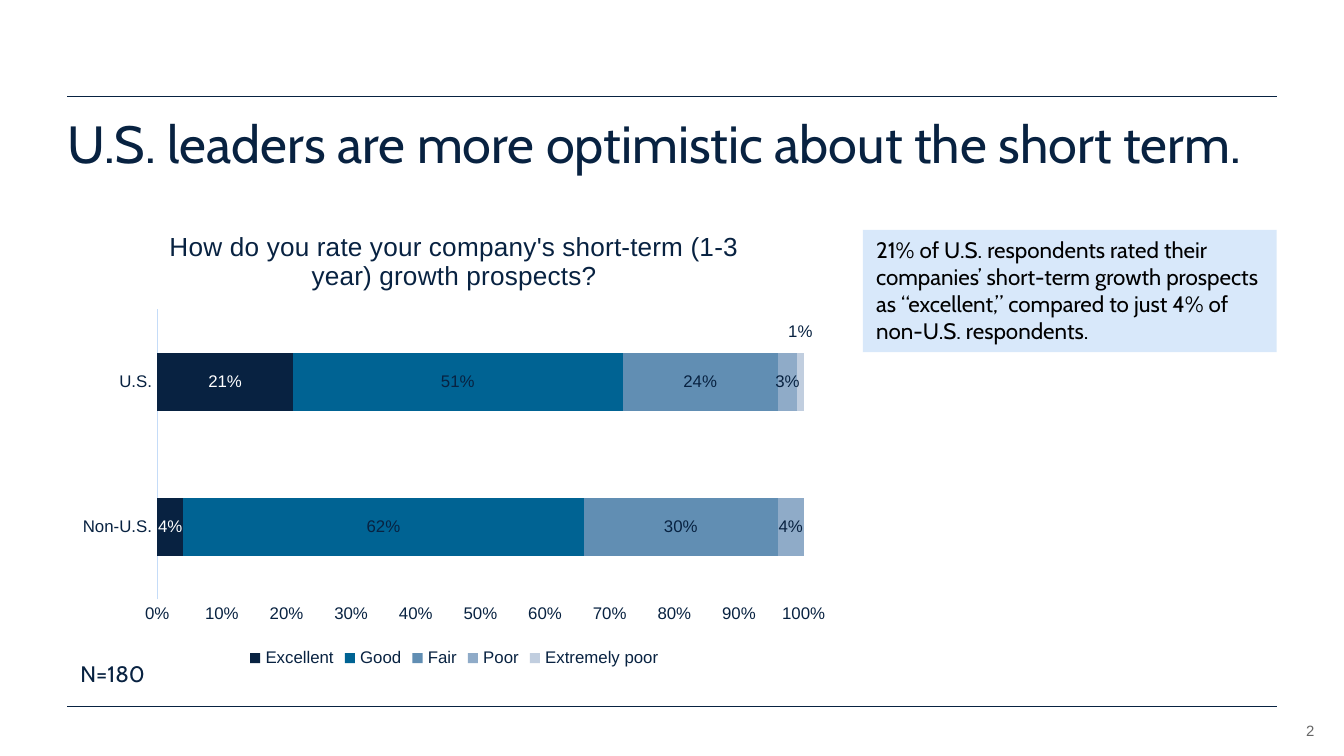
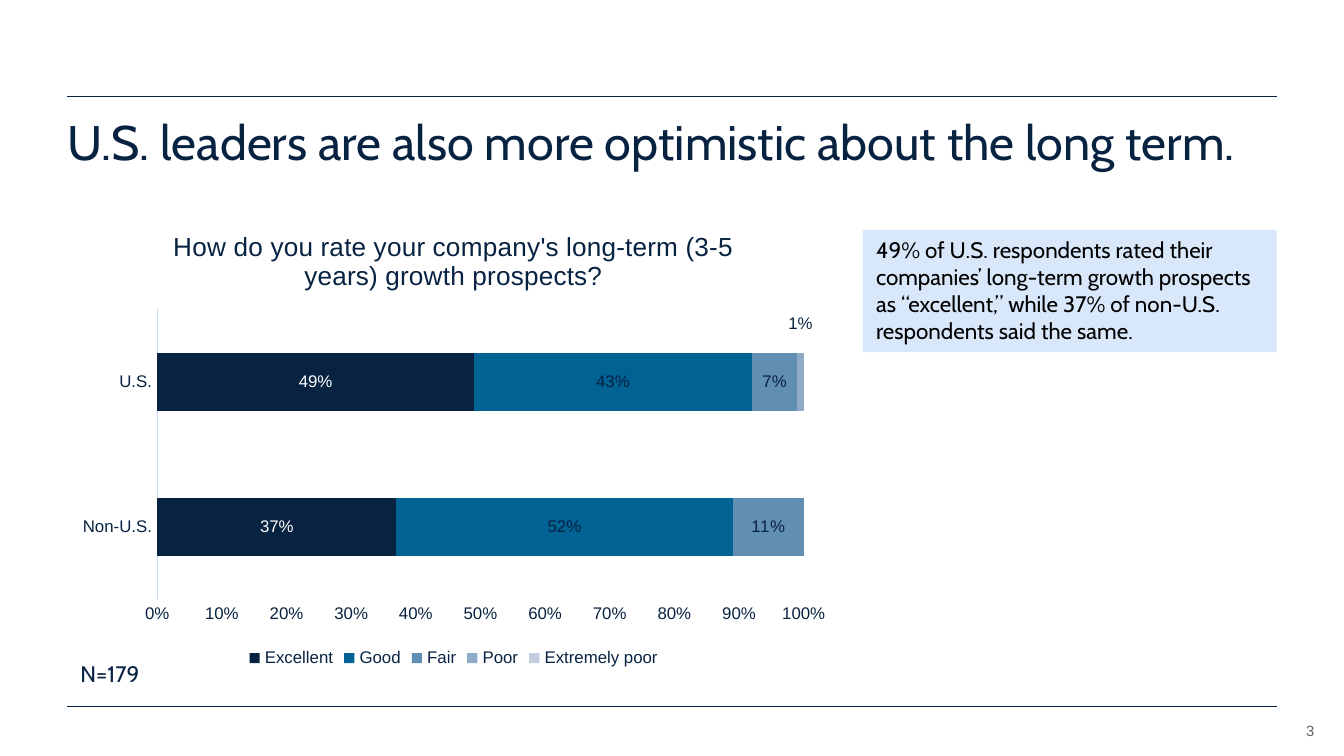
from dataclasses import dataclass
from typing import Optional

from lxml import etree
from pptx import Presentation
from pptx.chart.data import CategoryChartData
from pptx.dml.color import RGBColor
from pptx.enum import chart as ch
from pptx.enum import shapes, text
from pptx.oxml import ns
from pptx.util import Inches, Pt

NAVY, WHITE, BLACK = "082241", "FFFFFF", "000000"
CALLOUT_BLUE, AXIS_BLUE, NUMBER_GREY = "D8E8FA", "C5DCF8", "666666"
HEAD_FONT, CHART_FONT = "Cabin", "Arial"
LEFT, RIGHT = 0.5, 9.5
RULES_Y = (0.72, 5.26)
GROUPS = ("Non-U.S.", "U.S.")
US = GROUPS.index("U.S.")
RATINGS = {
    "Excellent": NAVY,
    "Good": "006393",
    "Fair": "618EB3",
    "Poor": "8FABC8",
    "Extremely poor": "C1CEDF",
}
C15 = "http://schemas.microsoft.com/office/drawing/2012/chart"
LABEL_EXTENSION = "{CE6537A1-D6FC-4f65-9D91-7224C49458BB}"


@dataclass(frozen=True)
class Box:
    left: float
    top: float
    width: float
    height: float

    def lengths(self) -> tuple:
        return tuple(Inches(v) for v in (self.left, self.top, self.width, self.height))


@dataclass(frozen=True)
class Style:
    size: float
    color: str
    font: str = HEAD_FONT


@dataclass(frozen=True)
class Survey:
    number: int
    headline: str
    headline_size: float
    finding: str
    sample: str
    question: str
    chart_box: Box
    shares: tuple[tuple[Optional[float], Optional[float]], ...]
    raised_rating: str
    raise_by: float


BARS = Box(1.17, 2.3, 4.81, 2.16)
SURVEYS = (
    Survey(
        2, "U.S. leaders are more optimistic about the short term.", 28,
        "21% of U.S. respondents rated their companies’ short-term growth prospects "
        "as “excellent,” compared to just 4% of non-U.S. respondents.",
        "N=180",
        "How do you rate your company's short-term (1-3 year) growth prospects?",
        Box(0.5, 1.55, 5.76, 3.46),
        ((0.04, 0.21), (0.62, 0.51), (0.3, 0.24), (0.04, 0.03), (None, 0.01)),
        "Extremely poor", 0.37,
    ),
    Survey(
        3, "U.S. leaders are also more optimistic about the long term.", 26,
        "49% of U.S. respondents rated their companies’ long-term growth prospects "
        "as “excellent,” while 37% of non-U.S. respondents said the same.",
        "N=179",
        "How do you rate your company's long-term (3-5 years) growth prospects?",
        Box(0.49, 1.55, 5.77, 3.46),
        ((0.37, 0.49), (0.52, 0.43), (0.11, 0.07), (None, 0.01), (None, None)),
        "Poor", 0.43,
    ),
)


def rgb(color: str) -> RGBColor:
    return RGBColor.from_string(color)


def apply_font(font, style: Style) -> None:
    font.size = Pt(style.size)
    font.name = style.font
    font.bold = False
    font.color.rgb = rgb(style.color)


def fill_solid(fill, color: str) -> None:
    fill.solid()
    fill.fore_color.rgb = rgb(color)


def write(shape, words: str, style: Style, align=text.PP_ALIGN.LEFT,
          anchor=text.MSO_ANCHOR.TOP, inset: bool = True):
    frame = shape.text_frame
    frame.word_wrap = True
    frame.vertical_anchor = anchor
    if not inset:
        frame.margin_left = frame.margin_right = 0
        frame.margin_top = frame.margin_bottom = 0
    paragraph = frame.paragraphs[0]
    paragraph.text = words
    paragraph.alignment = align
    apply_font(paragraph.font, style)
    return paragraph


def add_text(slide, box: Box, words: str, style: Style, **options):
    return write(slide.shapes.add_textbox(*box.lengths()), words, style, **options)


def add_rule(slide, y: float) -> None:
    rule = slide.shapes.add_connector(
        shapes.MSO_CONNECTOR.STRAIGHT, Inches(LEFT), Inches(y), Inches(RIGHT), Inches(y))
    rule.line.color.rgb = rgb(NAVY)
    rule.line.width = Pt(0.5)
    etree.SubElement(rule._element.spPr, ns.qn("a:effectLst"))


def add_callout(slide, box: Box, words: str) -> None:
    callout = slide.shapes.add_shape(shapes.MSO_SHAPE.RECTANGLE, *box.lengths())
    callout.shadow.inherit = False
    fill_solid(callout.fill, CALLOUT_BLUE)
    callout.line.fill.background()
    write(callout, words, Style(12, BLACK))


def manual_layout(**settings) -> etree._Element:
    layout = etree.Element(ns.qn("c:layout"))
    manual = etree.SubElement(layout, ns.qn("c:manualLayout"))
    for tag, value in settings.items():
        etree.SubElement(manual, ns.qn(f"c:{tag}")).set("val", str(value))
    return layout


def place_bars(chart, frame: Box) -> None:
    area = chart._chartSpace.chart.plotArea
    for old in area.findall(ns.qn("c:layout")):
        area.remove(old)
    area.insert(0, manual_layout(
        layoutTarget="inner", xMode="edge", yMode="edge",
        x=(BARS.left - frame.left) / frame.width,
        y=(BARS.top - frame.top) / frame.height,
        w=BARS.width / frame.width,
        h=BARS.height / frame.height))


def hide_leader_lines(labels: etree._Element) -> None:
    for leader in labels.findall(ns.qn("c:showLeaderLines")):
        leader.set("val", "0")
    extensions = etree.SubElement(labels, ns.qn("c:extLst"))
    extension = etree.SubElement(extensions, ns.qn("c:ext"), nsmap={"c15": C15})
    extension.set("uri", LABEL_EXTENSION)
    etree.SubElement(extension, f"{{{C15}}}showLeaderLines").set("val", "0")


def raise_label(series, share_of_height: float, style: Style) -> None:
    label = series.points[US].data_label
    label.position = ch.XL_LABEL_POSITION.CENTER
    apply_font(label.font, style)
    labels = series._element.find(ns.qn("c:dLbls"))
    index = labels.find(ns.qn("c:dLbl")).find(ns.qn("c:idx"))
    index.addnext(manual_layout(x=0, y=-share_of_height))
    hide_leader_lines(labels)


def style_series(series, color: str) -> Style:
    fill_solid(series.format.fill, color)
    series.invert_if_negative = False
    label_style = Style(9, WHITE if color == NAVY else NAVY, CHART_FONT)
    labels = series.data_labels
    labels.show_value = True
    labels.number_format = "0%"
    labels.number_format_is_linked = False
    labels.position = ch.XL_LABEL_POSITION.CENTER
    apply_font(labels.font, label_style)
    return label_style


def style_axes(chart) -> None:
    for axis in (chart.category_axis, chart.value_axis):
        axis.has_major_gridlines = False
        axis.major_tick_mark = axis.minor_tick_mark = ch.XL_TICK_MARK.NONE
        apply_font(axis.tick_labels.font, Style(9, NAVY, CHART_FONT))
    group_line = chart.category_axis.format.line
    group_line.color.rgb = rgb(AXIS_BLUE)
    group_line.width = Pt(0.75)
    share_axis = chart.value_axis
    share_axis.minimum_scale, share_axis.maximum_scale = 0, 1
    share_axis.major_unit = 0.1
    share_axis.tick_labels.number_format = "0%"
    share_axis.tick_labels.number_format_is_linked = False
    share_axis.format.line.fill.background()


def add_ratings_chart(slide, survey: Survey) -> None:
    data = CategoryChartData(number_format="0%")
    data.categories = GROUPS
    for rating, shares in zip(RATINGS, survey.shares):
        data.add_series(rating, shares)
    frame = survey.chart_box
    chart = slide.shapes.add_chart(
        ch.XL_CHART_TYPE.BAR_STACKED_100, *frame.lengths(), data).chart
    apply_font(chart.font, Style(10, NAVY, CHART_FONT))

    chart.has_title = True
    question = chart.chart_title.text_frame.paragraphs[0]
    question.text = survey.question
    apply_font(question.font, Style(14, NAVY, CHART_FONT))
    chart.chart_title.include_in_layout = False

    chart.has_legend = True
    chart.legend.position = ch.XL_LEGEND_POSITION.BOTTOM
    chart.legend.include_in_layout = False
    apply_font(chart.legend.font, Style(9, NAVY, CHART_FONT))

    plot = chart.plots[0]
    plot.gap_width, plot.overlap = 150, 100
    plot.vary_by_categories = False
    for series in plot.series:
        label_style = style_series(series, RATINGS[series.name])
        if series.name == survey.raised_rating:
            raise_label(series, survey.raise_by / frame.height, label_style)
    style_axes(chart)
    place_bars(chart, frame)


def add_survey_slide(deck, survey: Survey) -> None:
    slide = deck.slides.add_slide(deck.slide_layouts[6])
    for y in RULES_Y:
        add_rule(slide, y)
    add_text(slide, Box(9.31, 5.32, 0.47, 0.18), str(survey.number),
             Style(8, NUMBER_GREY, CHART_FONT), align=text.PP_ALIGN.RIGHT,
             anchor=text.MSO_ANCHOR.BOTTOM, inset=False)
    headline = add_text(slide, Box(LEFT, 0.88, RIGHT - LEFT, 0.55), survey.headline,
                        Style(survey.headline_size, NAVY), inset=False)
    headline.line_spacing = 0.9
    add_callout(slide, Box(6.42, 1.71, 3.08, 0.91), survey.finding)
    add_text(slide, Box(LEFT, 4.86, 0.88, 0.3), survey.sample, Style(12, NAVY))
    add_ratings_chart(slide, survey)


def main() -> None:
    deck = Presentation()
    deck.slide_width = Inches(10)
    deck.slide_height = deck.slide_width * 9 // 16
    for survey in SURVEYS:
        add_survey_slide(deck, survey)
    deck.save("out.pptx")


if __name__ == "__main__":
    main()
